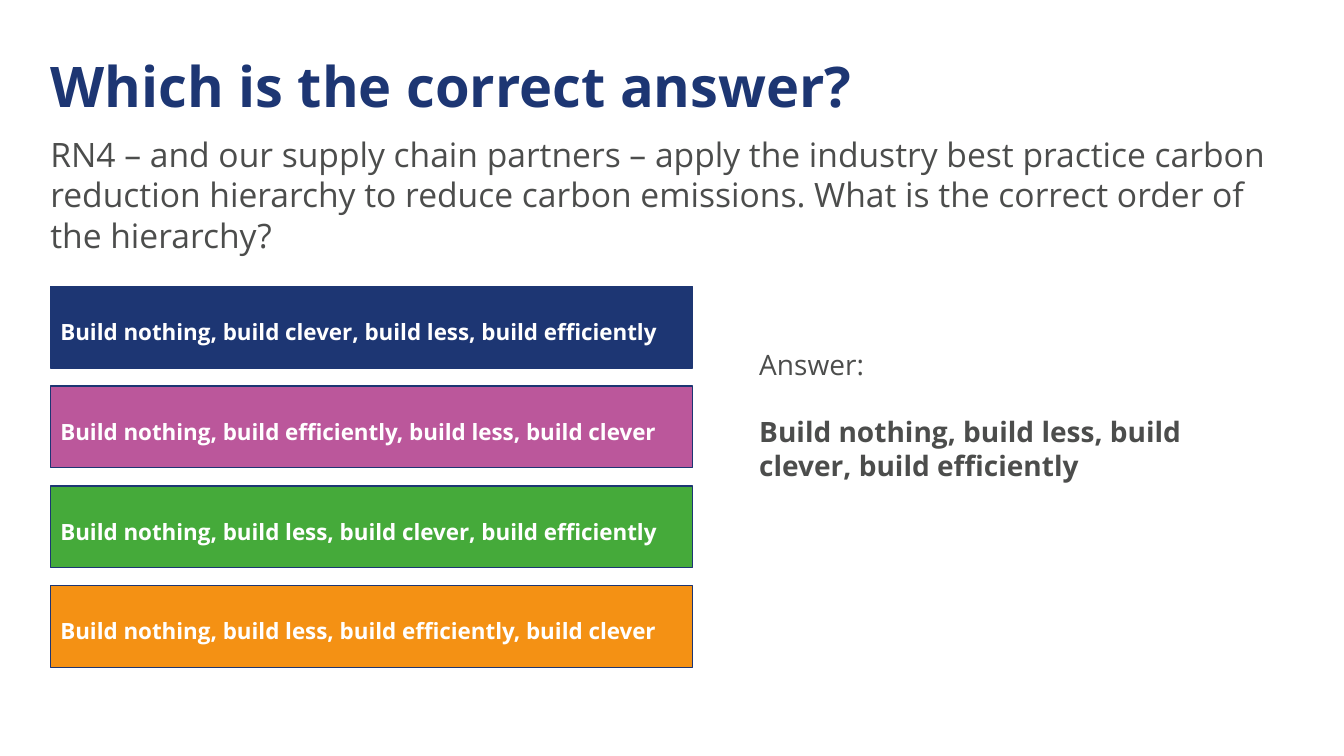
from dataclasses import dataclass

from pptx import Presentation
from pptx.dml.color import RGBColor
from pptx.enum.shapes import MSO_SHAPE
from pptx.enum.text import MSO_ANCHOR, MSO_AUTO_SIZE, PP_ALIGN
from pptx.util import Inches, Pt

RECTANGLE = MSO_SHAPE.RECTANGLE
TOP = MSO_ANCHOR.TOP
LEFT = PP_ALIGN.LEFT
NO_AUTOFIT = MSO_AUTO_SIZE.NONE
TITLE_ONLY = 5


@dataclass(frozen=True)
class Theme:
    font: str = "Open Sans"
    navy: str = "1D3673"
    pink: str = "BB579B"
    green: str = "45AA3A"
    orange: str = "F49114"
    grey: str = "4C4D4C"
    white: str = "FFFFFF"
    title_size: int = 40
    question_size: int = 24
    answer_size: int = 20
    option_size: int = 16


THEME = Theme()
MARGIN = 0.5
CONTENT_WIDTH = 12.33
OPTION_TOP = 2.84
OPTION_PITCH = 0.99
OPTION_WIDTH = 6.37
OPTION_HEIGHT = 0.81

OPTIONS = [
    ("Build nothing, build clever, build less, build efficiently", THEME.navy),
    ("Build nothing, build efficiently, build less, build clever", THEME.pink),
    ("Build nothing, build less, build clever, build efficiently", THEME.green),
    ("Build nothing, build less, build efficiently, build clever", THEME.orange),
]


def set_attributes(target, values):
    for name, value in values.items():
        setattr(target, name, value)


def format_frame(frame, inset_x=0, inset_y=0):
    set_attributes(frame, {
        "word_wrap": True,
        "auto_size": NO_AUTOFIT,
        "vertical_anchor": TOP,
        "margin_left": Inches(inset_x),
        "margin_right": Inches(inset_x),
        "margin_top": Inches(inset_y),
        "margin_bottom": Inches(inset_y),
    })


def write_paragraph(paragraph, text, size, color, bold=False, **spacing):
    paragraph.text = text
    set_attributes(paragraph, {"alignment": LEFT, **spacing})
    set_attributes(paragraph.font, {"name": THEME.font, "size": Pt(size), "bold": bold})
    paragraph.font.color.rgb = RGBColor.from_string(color)


def place_title(slide, text):
    title = slide.shapes.title
    set_attributes(title, {
        "left": Inches(MARGIN),
        "top": Inches(0.51),
        "width": Inches(CONTENT_WIDTH),
        "height": Inches(1.06),
    })
    format_frame(title.text_frame)
    write_paragraph(title.text_frame.paragraphs[0], text, THEME.title_size, THEME.navy, True)


def add_text(slide, left, top, width, height):
    box = slide.shapes.add_textbox(Inches(left), Inches(top), Inches(width), Inches(height))
    format_frame(box.text_frame)
    return box.text_frame


def add_option(slide, top, text, color):
    bar = slide.shapes.add_shape(
        RECTANGLE, Inches(MARGIN), Inches(top), Inches(OPTION_WIDTH), Inches(OPTION_HEIGHT))
    bar.shadow.inherit = False
    bar.fill.solid()
    bar.fill.fore_color.rgb = RGBColor.from_string(color)
    bar.line.color.rgb = RGBColor.from_string(THEME.navy)
    bar.line.width = Pt(1)
    format_frame(bar.text_frame, 0.1, 0.05)
    write_paragraph(bar.text_frame.paragraphs[0], text, THEME.option_size, THEME.white, True,
                    line_spacing=2.0)


def main():
    deck = Presentation()
    deck.slide_width = Inches(13.33)
    deck.slide_height = Inches(7.5)
    slide = deck.slides.add_slide(deck.slide_layouts[TITLE_ONLY])

    place_title(slide, "Which is the correct answer?")

    question = add_text(slide, MARGIN, 1.33, CONTENT_WIDTH, 1.3)
    write_paragraph(
        question.paragraphs[0],
        "RN4 – and our supply chain partners – apply the industry best practice carbon "
        "reduction hierarchy to reduce carbon emissions. What is the correct order of "
        "the hierarchy?",
        THEME.question_size, THEME.grey)

    for index, (text, color) in enumerate(OPTIONS):
        add_option(slide, OPTION_TOP + index * OPTION_PITCH, text, color)

    answer = add_text(slide, 7.53, 3.45, 4.91, 2.77)
    write_paragraph(answer.paragraphs[0], "Answer:", THEME.answer_size, THEME.grey)
    write_paragraph(answer.add_paragraph(),
                    "Build nothing, build less, build clever, build efficiently",
                    THEME.answer_size, THEME.grey, True, space_before=Pt(24))

    deck.save("out.pptx")


if __name__ == "__main__":
    main()
